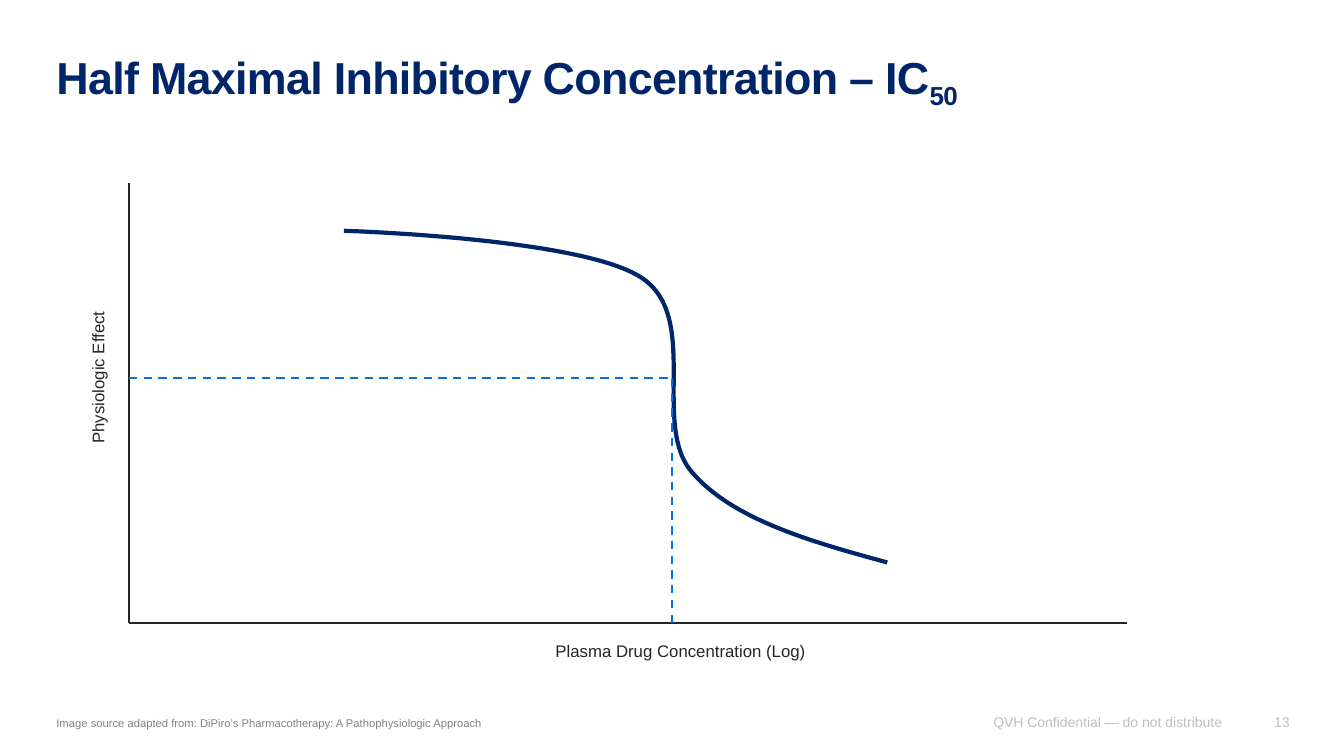
import pptx
import pptx.util
import pptx.dml.color
import pptx.enum.dml
import pptx.enum.shapes
import pptx.enum.text
import pptx.oxml

Pt = pptx.util.Pt
Align = pptx.enum.text.PP_ALIGN
Anchor = pptx.enum.text.MSO_ANCHOR
Dash = pptx.enum.dml.MSO_LINE

deck = pptx.Presentation()
deck.slide_width = pptx.util.Inches(13.33)
deck.slide_height = pptx.util.Inches(7.5)
col = deck.slide_width / 100
row = deck.slide_height / 100
slide = deck.slides.add_slide(deck.slide_layouts[5])
shapes = slide.shapes


def color(code):
    return pptx.dml.color.RGBColor.from_string(code)


def style(box, place, size, code, inset, anchor, align):
    left, top, width, height = place
    box.left, box.width = round(left * col), round(width * col)
    box.top, box.height = round(top * row), round(height * row)
    frame = box.text_frame
    frame.word_wrap = True
    frame.auto_size = pptx.enum.text.MSO_AUTO_SIZE.NONE
    frame.vertical_anchor = anchor
    frame.margin_left = frame.margin_right = Pt(7.2 * inset)
    frame.margin_top = frame.margin_bottom = Pt(3.6 * inset)
    para = frame.paragraphs[0]
    para.alignment = align
    para.font.name = "Arial"
    para.font.size = Pt(size)
    para.font.color.rgb = color(code)
    return para


title = shapes.title
para = style(title, (4.2, 6.67, 91.75, 13.33), 32, "002569", 0, Anchor.TOP, Align.LEFT)
para.line_spacing = 0.9
para.font.bold = True
for text, base in (("Half Maximal Inhibitory Concentration – IC", 0), ("50", -25000)):
    run = para.add_run()
    run.text = text
    props = run._r.get_or_add_rPr()
    props.set("spc", "-50")
    if base:
        props.set("baseline", str(base))

labels = (
    ("13", (92.2, 93.07, 3.75, 3.6), 10, "BFBFBF", 0, Anchor.BOTTOM, Align.RIGHT, 0),
    ("QVH Confidential — do not distribute", (72.54, 93.07, 18.38, 3.6),
     10, "BFBFBF", 0, Anchor.BOTTOM, Align.RIGHT, 0),
    ("Image source adapted from: DiPiro’s Pharmacotherapy: A Pathophysiologic Approach",
     (4.2, 92.93, 42.69, 3.6), 8, "808080", 0, Anchor.BOTTOM, Align.LEFT, 0),
    ("Plasma Drug Concentration (Log)", (40.59, 84.13, 23.86, 4),
     12, "272524", 1, Anchor.TOP, Align.LEFT, 0),
    ("Physiologic Effect", (0.83, 46.53, 12.9, 4),
     12, "272524", 1, Anchor.TOP, Align.LEFT, 270),
)
for text, place, size, code, inset, anchor, align, turn in labels:
    box = shapes.add_textbox(0, 0, 0, 0)
    style(box, place, size, code, inset, anchor, align).add_run().text = text
    box.rotation = turn

bends = (
    ((66.02, 74.4), (60.24, 71.6), (54.46, 68.67), (51.46, 62.4)),
    ((51.46, 62.4), (48.46, 56.13), (52.14, 42), (47.79, 36.8)),
    ((47.79, 36.8), (43.44, 31.47), (25.58, 30.53), (25.58, 30.53)),
)
steps = 40
points = []
for bend in bends:
    for step in range(steps + 1):
        t = step / steps
        parts = ((1 - t) ** 3, 3 * t * (1 - t) ** 2, 3 * t ** 2 * (1 - t), t ** 3)
        x = sum(part * spot[0] for part, spot in zip(parts, bend))
        y = sum(part * spot[1] for part, spot in zip(parts, bend))
        points.append((round(x * col), round(y * row)))
pen = shapes.build_freeform(*points[0])
pen.add_line_segments(points[1:], close=False)
curve = pen.convert_to_shape()
curve.shadow.inherit = False
curve.fill.background()
curve.line.color.rgb = color("002569")
curve.line.width = Pt(3)

left, right, top, base = 9.6, 83.87, 24.27, 82.4
half = 50
lines = (
    (left, top, left, base, "272524", Dash.SOLID),
    (right, base, left, base, "272524", Dash.SOLID),
    (left, half, half, half, "0073E0", Dash.DASH),
    (half, base, half, half, "0073E0", Dash.DASH),
)
for x1, y1, x2, y2, code, dash in lines:
    line = shapes.add_connector(
        pptx.enum.shapes.MSO_CONNECTOR.STRAIGHT,
        round(x1 * col), round(y1 * row), round(x2 * col), round(y2 * row))
    line.line.color.rgb = color(code)
    line.line.width = Pt(1.5)
    line.line.dash_style = dash
    line._element.spPr.append(pptx.oxml.parse_xml(
        '<a:effectLst xmlns:a="http://schemas.openxmlformats.org/drawingml/2006/main"/>'))

deck.save("out.pptx")
